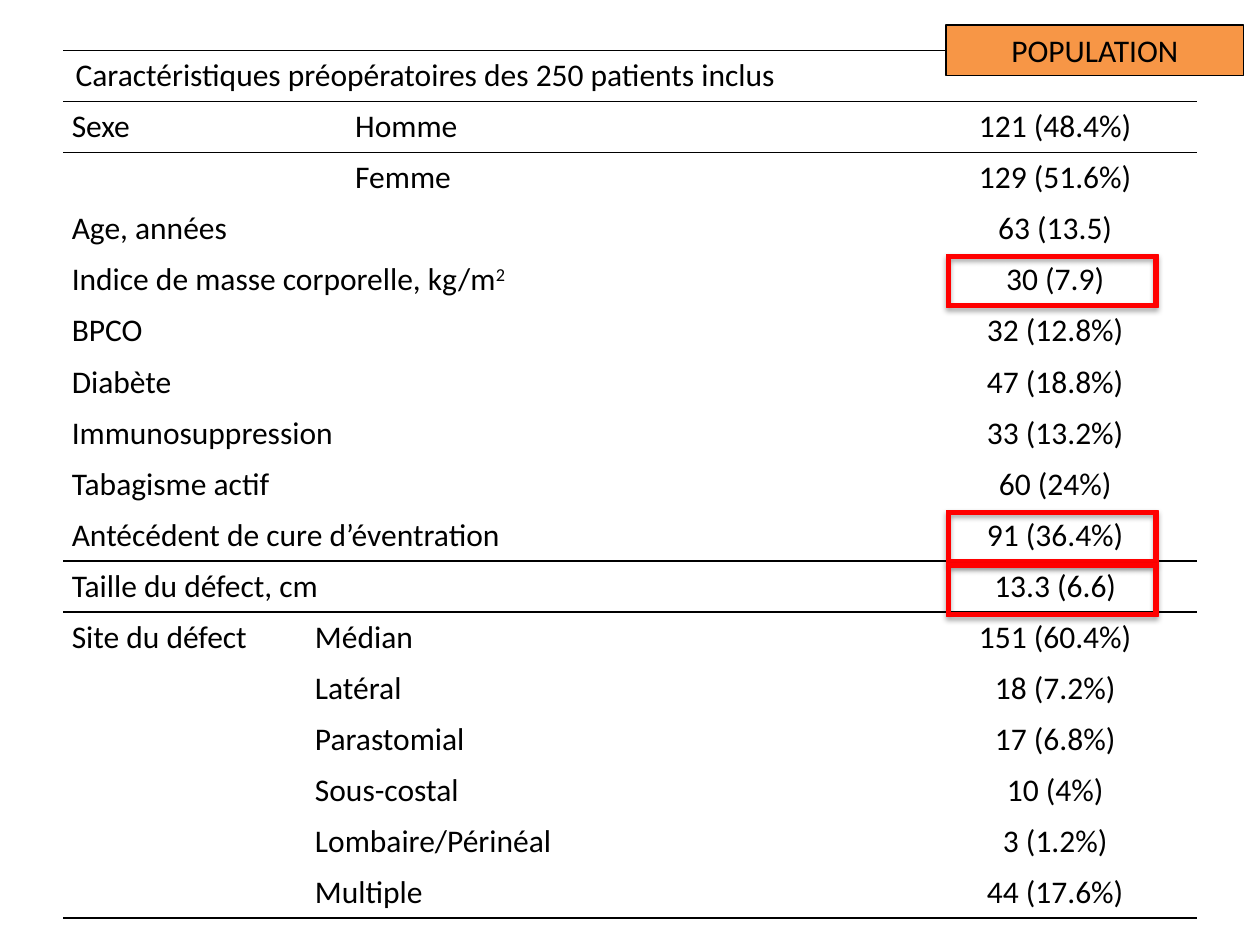
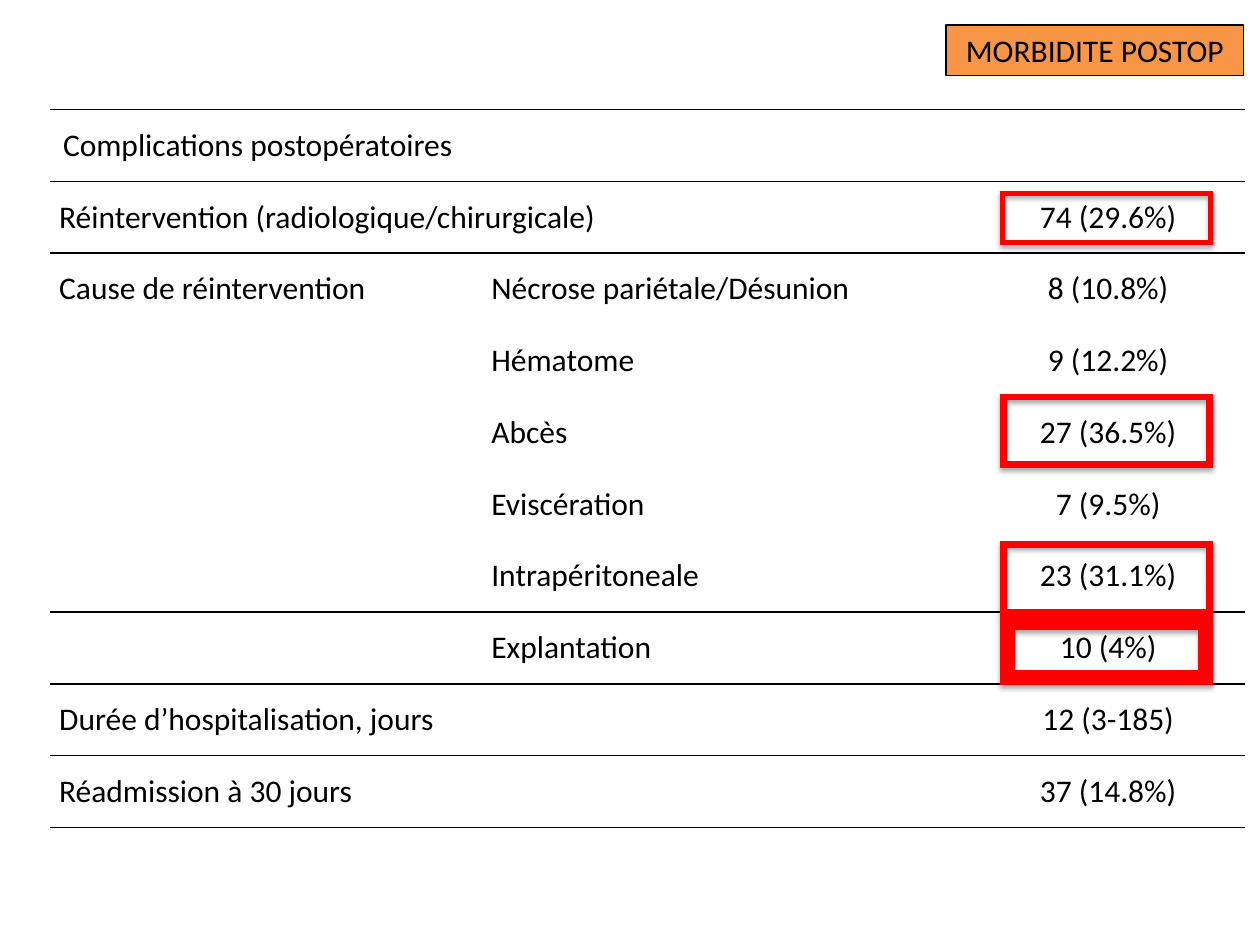
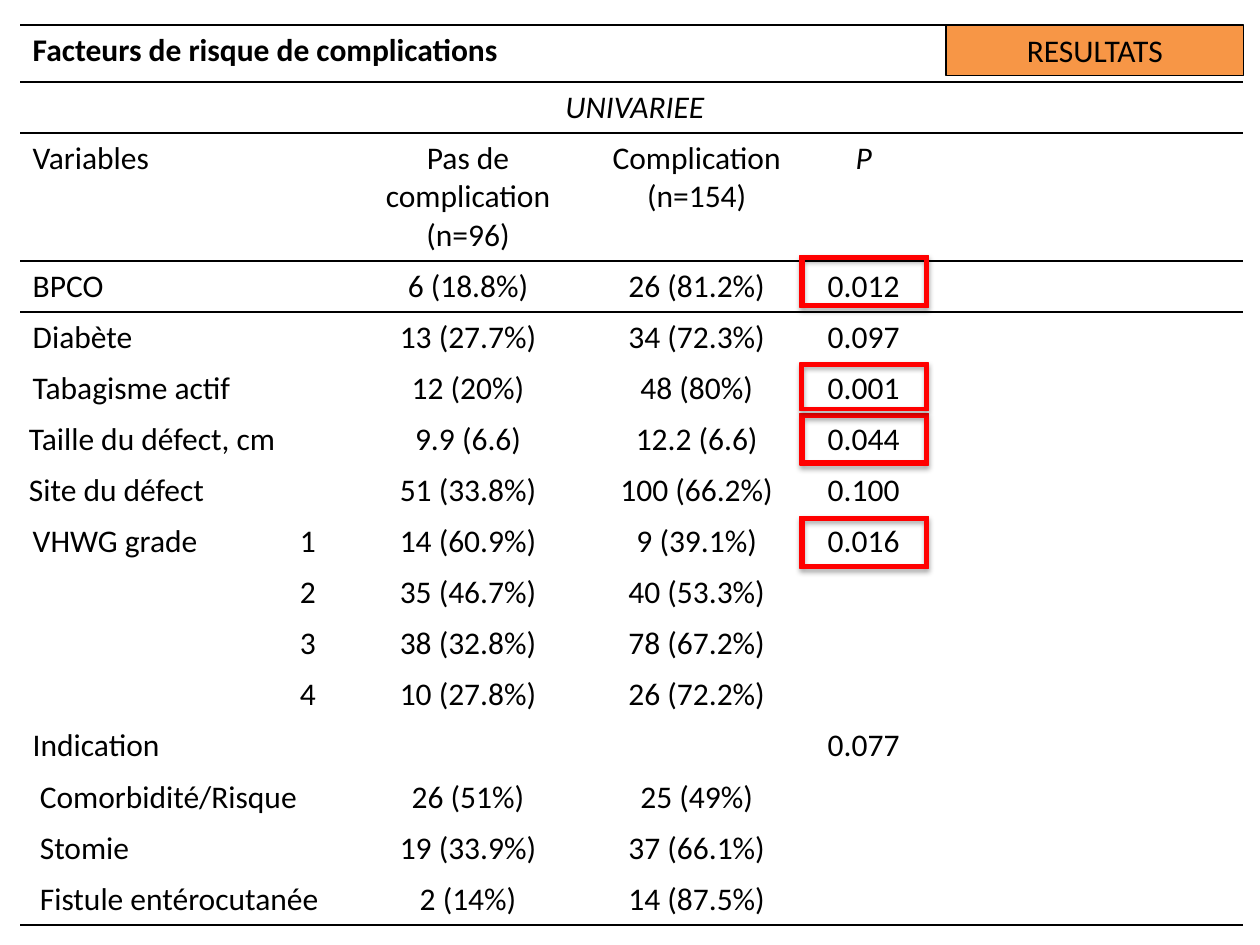
from lxml import etree
from pptx import Presentation
from pptx.dml.color import RGBColor
from pptx.enum.shapes import MSO_SHAPE
from pptx.enum.text import MSO_ANCHOR, PP_ALIGN
from pptx.oxml import parse_xml
from pptx.oxml.ns import qn
from pptx.util import Inches, Pt

RECT, FRAME = MSO_SHAPE.RECTANGLE, MSO_SHAPE.FRAME
TOP, MIDDLE = MSO_ANCHOR.TOP, MSO_ANCHOR.MIDDLE
LEFT, CENTER = PP_ALIGN.LEFT, PP_ALIGN.CENTER

BLACK = RGBColor(0x00, 0x00, 0x00)
ORANGE = RGBColor(0xF7, 0x96, 0x46)
RED = RGBColor(0xFF, 0x00, 0x00)
FONT, SIZE = "Calibri", Pt(18)
NS = 'xmlns:a="http://schemas.openxmlformats.org/drawingml/2006/main"'
PLAIN = "{2D5ABB26-0587-4C30-8999-92F81FD0307C}"
SHADOW = (
    f'<a:effectLst {NS}><a:outerShdw blurRad="{Pt(3.1)}" dist="{Pt(1.8)}" '
    'dir="5400000" rotWithShape="0"><a:srgbClr val="000000">'
    '<a:alpha val="35000"/></a:srgbClr></a:outerShdw></a:effectLst>'
)
LOOSE = {"margin_left": 0.1, "margin_right": 0.1,
         "margin_top": 0.05, "margin_bottom": 0.05}
TIGHT = {"margin_left": 0.07, "margin_right": 0.07,
         "margin_top": 0, "margin_bottom": 0}

# In the rows below, None extends the cell on its left and ^ starts a superscript.
PATIENTS = [
    ["Caractéristiques préopératoires des 250 patients inclus",
     None, None, None, None],
    ["Sexe", None, "Homme", None, "121 (48.4%)"],
    ["", None, "Femme", None, "129 (51.6%)"],
    ["Age, années", None, None, "", "63 (13.5)"],
    ["Indice de masse corporelle, kg/m^2", None, None, None, "30 (7.9)"],
    ["BPCO", None, "", None, "32 (12.8%)"],
    ["Diabète", None, "", None, "47 (18.8%)"],
    ["Immunosuppression", None, None, None, "33 (13.2%)"],
    ["Tabagisme actif", None, None, None, "60 (24%)"],
    ["Antécédent de cure d’éventration", None, None, None, "91 (36.4%)"],
    ["Taille du défect, cm", None, None, None, "13.3 (6.6)"],
    ["Site du défect", "Médian", None, None, "151 (60.4%)"],
    ["", "Latéral", None, None, "18 (7.2%)"],
    ["", "Parastomial", None, None, "17 (6.8%)"],
    ["", "Sous-costal", None, None, "10 (4%)"],
    ["", "Lombaire/Périnéal", None, None, "3 (1.2%)"],
    ["", "Multiple", None, None, "44 (17.6%)"],
]
EVENTS = [
    ["Complications postopératoires", None, None],
    ["Réintervention (radiologique/chirurgicale)", None, "74 (29.6%)"],
    ["Cause de réintervention", "Nécrose pariétale/Désunion", "8 (10.8%)"],
    ["", "Hématome", "9 (12.2%)"],
    ["", "Abcès", "27 (36.5%)"],
    ["", "Eviscération", "7 (9.5%)"],
    ["", "Intrapéritoneale", "23 (31.1%)"],
    ["", "Explantation", "10 (4%)"],
    ["Durée d’hospitalisation, jours", "", "12 (3-185)"],
    ["Réadmission à 30 jours", "", "37 (14.8%)"],
]
FACTORS = [
    ["Facteurs de risque de complications", None, None, None, None, None, None],
    ["", None, "UNIVARIEE", None, None, "", ""],
    ["Variables", None, "Pas de complication (n=96)",
     "Complication (n=154)", "P", "", ""],
    ["BPCO", None, "6 (18.8%)", "26 (81.2%)", "0.012", "", ""],
    ["Diabète", None, "13 (27.7%)", "34 (72.3%)", "0.097", "", ""],
    ["Tabagisme actif", None, "12 (20%)", "48 (80%)", "0.001", "", ""],
    ["Taille du défect, cm", None, "9.9 (6.6)", "12.2 (6.6)", "0.044", "", ""],
    ["Site du défect", None, "51 (33.8%)", "100 (66.2%)", "0.100", "", ""],
    ["VHWG grade", "1", "14 (60.9%)", "9 (39.1%)", "0.016", "", ""],
    ["", "2", "35 (46.7%)", "40 (53.3%)", "", "", ""],
    ["", "3", "38 (32.8%)", "78 (67.2%)", "", "", ""],
    ["", "4", "10 (27.8%)", "26 (72.2%)", "", "", ""],
    ["Indication", None, "", "", "0.077", "", ""],
    [" Comorbidité/Risque", None, "26 (51%)", "25 (49%)", "", "", ""],
    [" Stomie", None, "19 (33.9%)", "37 (66.1%)", "", "", ""],
    [" Fistule entérocutanée", None, "2 (14%)", "14 (87.5%)", "", "", ""],
]


def write(para, text, align, look=None):
    para.alignment = align
    for n, part in enumerate(text.split("^")):
        run = para.add_run()
        run.text = part
        style = {"name": FONT, "size": SIZE, **(look or {})}
        for key, value in style.items():
            setattr(run.font, key, value)
        run.font.color.rgb = BLACK
        if n:
            run.font._element.set("baseline", "30000")


def rule(cell, side):
    """Draw a black line on the side T or B of a cell."""
    line = etree.SubElement(cell._tc.get_or_add_tcPr(), qn(f"a:ln{side}"),
                            w=str(Pt(1)))
    fill = etree.SubElement(line, qn("a:solidFill"))
    etree.SubElement(fill, qn("a:srgbClr"), val=str(BLACK))


def add_grid(slide, box, cols, rows, lines, mid, loose, top=(), looks=None,
             tall=None):
    """Add a table; lines are ruled row edges, columns from mid are centred."""
    left, y, width, height = map(Inches, box)
    table = slide.shapes.add_table(len(rows), len(cols), left, y,
                                   width, height).table
    table._tbl.tblPr.find(qn("a:tableStyleId")).text = PLAIN
    table.first_row = table.horz_banding = False
    tall = tall or {}
    each = (box[3] - sum(tall.values())) / (len(rows) - len(tall))
    for col, size in zip(table.columns, cols):
        col.width = Inches(size)
    for r, texts in enumerate(rows):
        table.rows[r].height = Inches(tall.get(r, each))
        for c, text in enumerate(texts):
            cell = table.cell(r, c)
            for side, edge in (("T", r), ("B", r + 1)):
                if edge in lines:
                    rule(cell, side)
            cell.fill.background()
            for key, value in (LOOSE if (r, c) in loose else TIGHT).items():
                setattr(cell, key, Inches(value))
            cell.vertical_anchor = TOP if (r, c) in top else MIDDLE
            if text:
                write(cell.text_frame.paragraphs[0], text,
                      CENTER if c >= mid else LEFT, (looks or {}).get((r, c)))
        starts = [c for c, text in enumerate(texts) if text is not None]
        for a, b in zip(starts, starts[1:] + [len(cols)]):
            if b - a > 1:
                table.cell(r, a).merge(table.cell(r, b - 1))


def add_box(slide, kind, box, fill, line, weight):
    shape = slide.shapes.add_shape(kind, *map(Inches, box))
    shape.fill.solid()
    shape.fill.fore_color.rgb = fill
    shape.line.color.rgb = line
    shape.line.width = Pt(weight)
    shape.shadow.inherit = False
    return shape


def add_tag(slide, text):
    tag = add_box(slide, RECT, (7.51, 0.2, 2.36, 0.4), ORANGE, BLACK, 1)
    frame = tag.text_frame
    frame.word_wrap = True
    frame.vertical_anchor = TOP
    write(frame.paragraphs[0], text, CENTER)


def add_mark(slide, left, top, width, height, thick=0.074):
    """Frame a key figure in red."""
    mark = add_box(slide, FRAME, (left, top, width, height), RED, RED, 0.75)
    mark.adjustments[0] = thick
    props = mark._element.spPr
    props.replace(props.find(qn("a:effectLst")), parse_xml(SHADOW))


def main():
    deck = Presentation()
    deck.slide_width, deck.slide_height = Inches(10), Inches(7.5)
    blank = deck.slide_layouts[6]

    slide = deck.slides.add_slide(blank)
    add_grid(slide, (0.5, 0.4, 9, 6.89), (1.93, 0.32, 2.25, 2.25, 2.25),
             PATIENTS, {0, 1, 10, 17}, 4, {(0, 0)}, {(0, 0)})
    add_tag(slide, "POPULATION")
    for top in (2.02, 4.05, 4.47):
        add_mark(slide, 7.51, top, 1.68, 0.42)

    slide = deck.slides.add_slide(blank)
    add_grid(slide, (0.4, 0.87, 9.48, 5.7), (3.43, 3.88, 2.17),
             EVENTS, {0, 1, 7, 8, 10}, 2, {(0, 0)})
    add_tag(slide, "MORBIDITE POSTOP")
    for top, height, thick in ((1.52, 0.42, 0.074), (3.13, 0.58, 0.074),
                               (4.3, 0.58, 0.074), (4.89, 0.54, 0.199)):
        add_mark(slide, 7.94, top, 1.68, height, thick)

    slide = deck.slides.add_slide(blank)
    add_tag(slide, "RESULTATS")
    names = {(r, 0) for r in range(len(FACTORS)) if r not in (6, 7)}
    heads = {(2, c) for c in range(2, 5)}
    add_grid(slide, (0.16, 0.2, 9.72, 7.12),
             (2.15, 0.41, 1.99, 1.64, 1.01, 1.74, 0.77),
             FACTORS, {0, 1, 2, 3, 16}, 2, names | heads, names | heads,
             {(0, 0): {"bold": True}, (1, 2): {"italic": True},
              (2, 4): {"italic": True}}, {0: 0.45, 2: 1})
    for top, height in ((2.03, 0.41), (3.28, 0.41), (2.88, 0.38), (4.1, 0.41)):
        add_mark(slide, 6.35, top, 1.02, height)

    deck.save("out.pptx")


if __name__ == "__main__":
    main()
